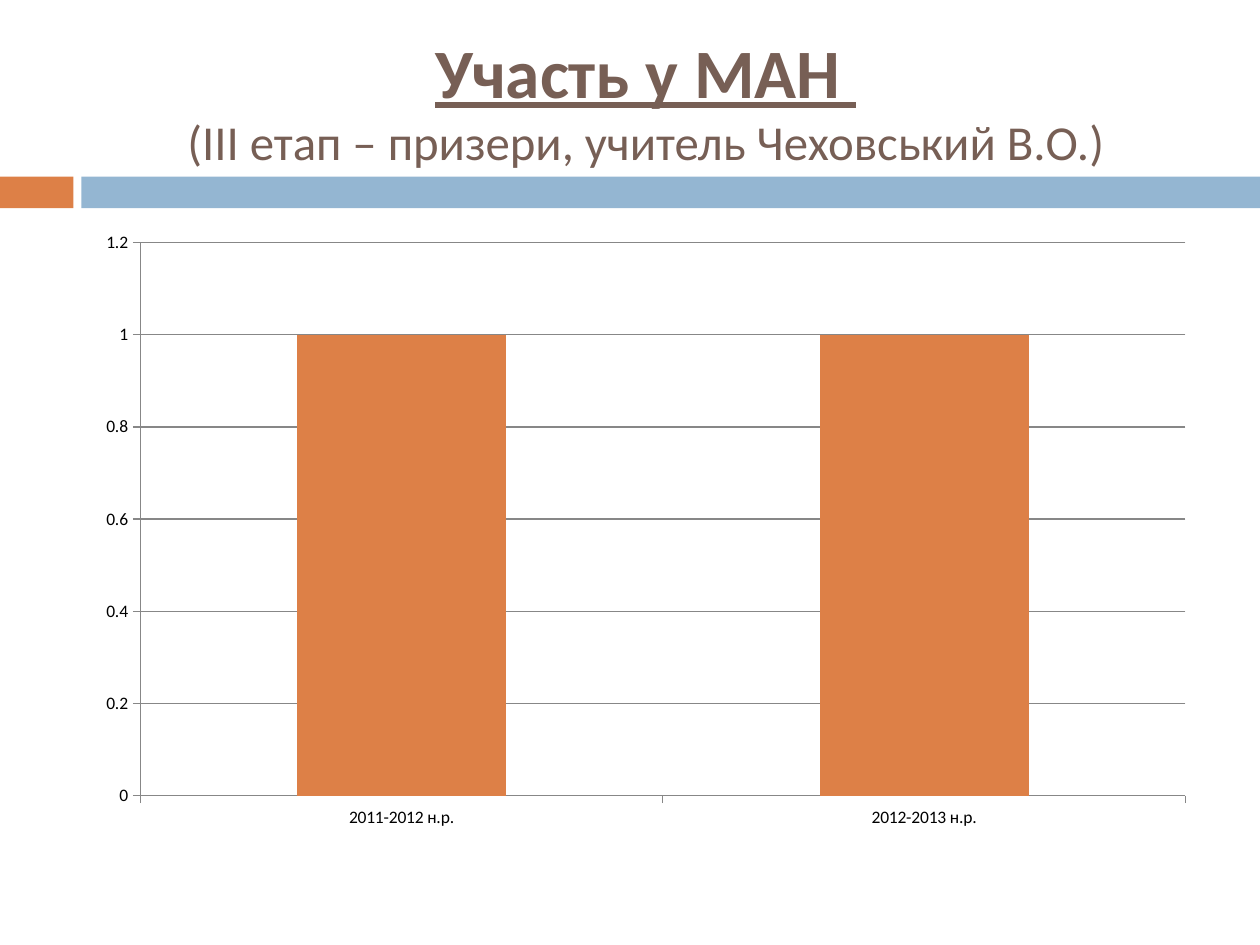
from pptx import Presentation
from pptx.chart.data import CategoryChartData
from pptx.dml.color import RGBColor
from pptx.enum import chart as ch, shapes, text
from pptx.util import Cm, Pt

FONT = "Calibri"
ORANGE, BLUE, BROWN, GREY, BLACK = "DD8047", "94B6D2", "775F55", "878787", "000000"
MARGIN, CONTENT_WIDTH = Cm(1.69), Cm(22.66)


def rgb(value):
    return RGBColor.from_string(value)


def style_font(font, size, color, bold=False, underline=False):
    font.name, font.size = FONT, Pt(size)
    font.bold, font.underline = bold, underline
    font.color.rgb = rgb(color)


def add_text(paragraph, content, **style):
    run = paragraph.add_run()
    run.text = content
    style_font(run.font, **style)


def add_band(slide, left, width, color):
    band = slide.shapes.add_shape(
        shapes.MSO_SHAPE.RECTANGLE, left, Cm(3.56), width, Cm(0.64))
    band.shadow.inherit = False
    band.fill.solid()
    band.fill.fore_color.rgb = rgb(color)
    band.line.fill.background()


def fill_title(slide):
    title = slide.shapes.title
    title.left, title.top, title.width, title.height = (
        MARGIN, Cm(0.64), CONTENT_WIDTH, Cm(2.74))
    frame = title.text_frame
    frame.word_wrap = True
    frame.auto_size = text.MSO_AUTO_SIZE.NONE
    frame.vertical_anchor = text.MSO_ANCHOR.MIDDLE
    heading = frame.paragraphs[0]
    heading.alignment = text.PP_ALIGN.CENTER
    heading.line_spacing = 1.0
    add_text(heading, "Участь у МАН ", size=39.6, color=BROWN, bold=True, underline=True)
    heading.add_line_break()
    add_text(heading, "(ІІІ етап – призери, учитель Чеховський В.О.)", size=27.9, color=BROWN)


def style_line(line):
    line.color.rgb = rgb(GREY)
    line.width = Pt(0.75)


def add_winners_chart(slide):
    data = CategoryChartData()
    data.categories = ["2011-2012 н.р.", "2012-2013 н.р."]
    data.add_series("Series 1", [1, 1])
    chart = slide.shapes.add_chart(
        ch.XL_CHART_TYPE.COLUMN_CLUSTERED,
        MARGIN, Cm(4.44), CONTENT_WIDTH, Cm(12.5), data).chart
    chart.has_title = chart.has_legend = False
    style_font(chart.font, size=10, color=BLACK)

    plot = chart.plots[0]
    plot.vary_by_categories = False
    plot.gap_width = 150
    bars = plot.series[0].format
    bars.fill.solid()
    bars.fill.fore_color.rgb = rgb(ORANGE)

    for axis in (chart.category_axis, chart.value_axis):
        axis.major_tick_mark = ch.XL_TICK_MARK.OUTSIDE
        axis.minor_tick_mark = ch.XL_TICK_MARK.NONE
        style_line(axis.format.line)
    scale = chart.value_axis
    scale.minimum_scale, scale.maximum_scale, scale.major_unit = 0, 1.2, 0.2
    scale.has_major_gridlines = True
    style_line(scale.major_gridlines.format.line)


def main():
    deck = Presentation()
    deck.slide_width, deck.slide_height = Cm(25.4), Cm(19.05)
    slide = deck.slides.add_slide(deck.slide_layouts[5])
    add_band(slide, Cm(0), Cm(1.48), ORANGE)
    add_band(slide, Cm(1.64), Cm(23.76), BLUE)
    fill_title(slide)
    add_winners_chart(slide)
    deck.save("out.pptx")


if __name__ == "__main__":
    main()
